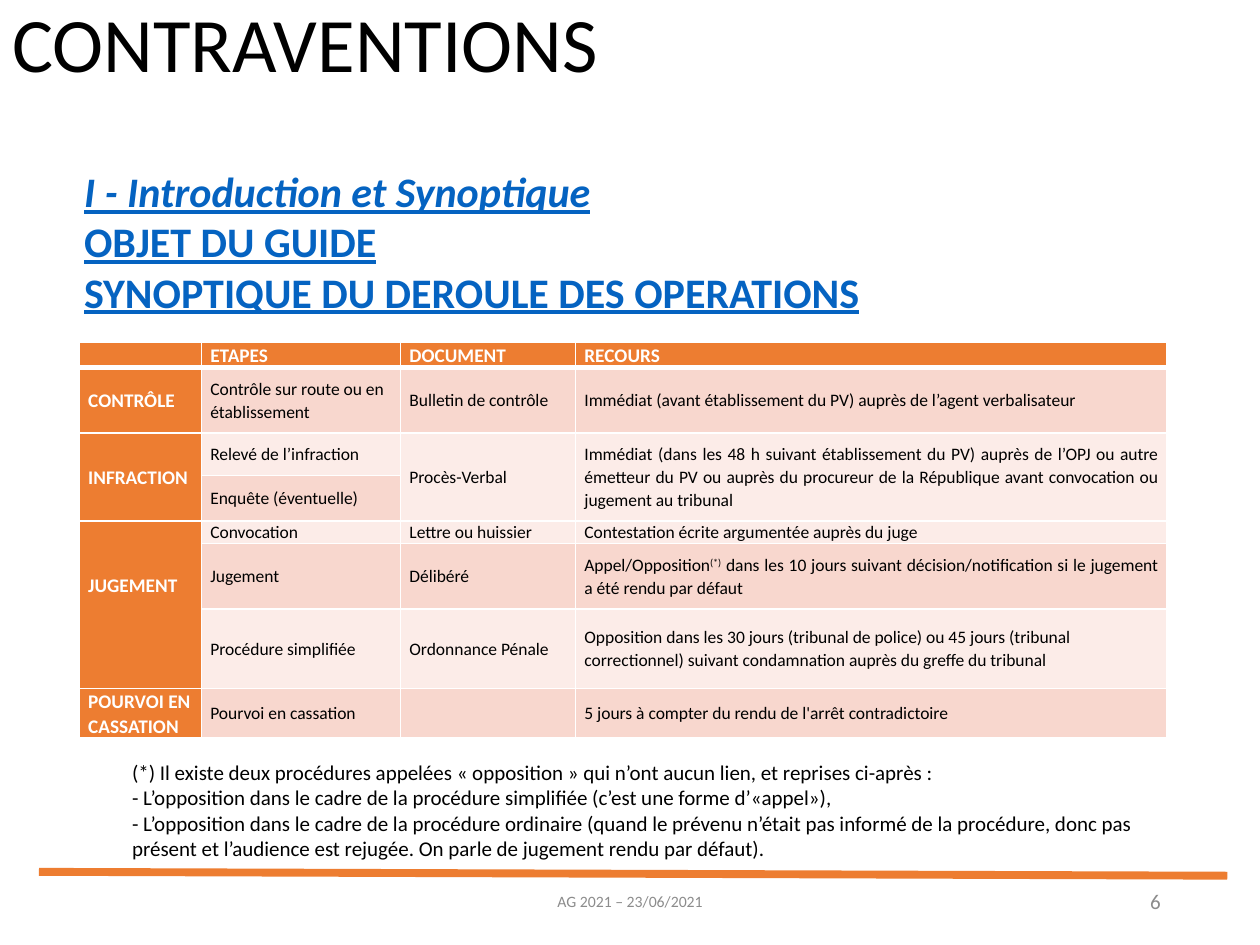
from lxml.etree import SubElement
from pptx import Presentation
from pptx.dml.color import RGBColor
from pptx.enum.shapes import MSO_CONNECTOR
from pptx.enum.text import MSO_ANCHOR, PP_ALIGN
from pptx.oxml.ns import qn
from pptx.util import Pt

ORANGE = RGBColor(0xED, 0x7D, 0x31)
BAND_DARK = RGBColor(0xF8, 0xD7, 0xCE)
BAND_LIGHT = RGBColor(0xFC, 0xEC, 0xE8)
BLUE = RGBColor(0x05, 0x63, 0xC1)
GREY = RGBColor(0x8C, 0x8C, 0x8C)
BLACK = RGBColor(0, 0, 0)
WHITE = RGBColor(0xFF, 0xFF, 0xFF)
FONT = "Calibri"

COLUMN_WIDTHS = [69.8, 113.8, 100, 337.7]
ROW_HEIGHTS = [13, 37.4, 24.5, 25.9, 12.2, 37.4, 45.4, 27.4]
ROWS = [
    ["", "ETAPES", "DOCUMENT", "RECOURS"],
    ["CONTRÔLE", "Contrôle sur route ou en établissement", "Bulletin de contrôle",
     "Immédiat (avant établissement du PV) auprès de l’agent verbalisateur"],
    ["INFRACTION", "Relevé de l’infraction", "Procès-Verbal",
     "Immédiat (dans les 48 h suivant établissement du PV) auprès de l’OPJ ou autre émetteur "
     "du PV ou auprès du procureur de la République avant convocation ou jugement au tribunal"],
    ["", "Enquête (éventuelle)", "", ""],
    ["JUGEMENT", "Convocation", "Lettre ou huissier",
     "Contestation écrite argumentée auprès du juge"],
    ["", "Jugement", "Délibéré",
     "Appel/Opposition(*) dans les 10 jours suivant décision/notification si le jugement "
     "a été rendu par défaut"],
    ["", "Procédure simplifiée", "Ordonnance Pénale",
     "Opposition dans les 30 jours (tribunal de police) ou 45 jours (tribunal correctionnel) "
     "suivant condamnation auprès du greffe du tribunal"],
    ["POURVOI EN CASSATION", "Pourvoi en cassation", "",
     "5 jours à compter du rendu de l'arrêt contradictoire"],
]
MERGES = [(2, 0, 3, 0), (2, 2, 3, 2), (2, 3, 3, 3), (4, 0, 6, 0)]
JUSTIFIED_ROWS = {1, 2, 5, 7}
FOOTNOTE_MARK = "(*)"


def style_font(font, size, color, bold=False):
    font.name = FONT
    font.size = Pt(size)
    font.color.rgb = color
    font.bold = bold


def add_text(slide, box, lines, size, color, anchor=MSO_ANCHOR.TOP,
             alignment=PP_ALIGN.LEFT, bold=False):
    """Add a wrapped text box with one paragraph per line; return its paragraphs."""
    frame = slide.shapes.add_textbox(*map(Pt, box)).text_frame
    frame.word_wrap = True
    frame.vertical_anchor = anchor
    frame.text = "\n".join(lines)
    for paragraph in frame.paragraphs:
        paragraph.alignment = alignment
        style_font(paragraph.font, size, color, bold)
    return frame.paragraphs


def add_title(slide, box):
    paragraph, = add_text(slide, box, ["CONTRAVENTIONS"], 44, BLACK, MSO_ANCHOR.MIDDLE)
    paragraph.line_spacing = 0.9


def add_headings(slide, box):
    lines = ["I - Introduction et Synoptique", "OBJET DU GUIDE",
             "SYNOPTIQUE DU DEROULE DES OPERATIONS"]
    paragraphs = add_text(slide, box, lines, 24, BLUE, bold=True)
    for paragraph in paragraphs:
        paragraph.font.underline = True
    paragraphs[0].font.italic = True


def set_borders(cell, bottom_width):
    properties = cell._tc.get_or_add_tcPr()
    for index, side in enumerate("LRTB"):
        width = bottom_width if side == "B" else 1
        line = SubElement(properties, qn(f"a:ln{side}"), w=str(Pt(width)))
        fill = SubElement(line, qn("a:solidFill"))
        SubElement(fill, qn("a:srgbClr"), val=str(WHITE))
        properties.insert(index, line)


def write_cell(cell, text, size, color, bold, alignment):
    paragraph = cell.text_frame.paragraphs[0]
    paragraph.line_spacing = 1.07
    paragraph.space_after = Pt(8)
    paragraph.alignment = alignment
    style_font(paragraph.font, size, color, bold)
    if not text:
        SubElement(paragraph._p, qn("a:endParaRPr"), sz=str(size * 100))
        return
    before, mark, after = text.partition(FOOTNOTE_MARK)
    for part in filter(None, (before, mark, after)):
        run = paragraph.add_run()
        run.text = part
        if part == FOOTNOTE_MARK:
            run.font._element.set("baseline", "30000")


def add_synoptic_table(slide, box):
    table = slide.shapes.add_table(len(ROWS), len(COLUMN_WIDTHS), *map(Pt, box)).table
    for column, width in zip(table.columns, COLUMN_WIDTHS):
        column.width = Pt(width)
    last_row = len(ROWS) - 1
    for r, (row, height) in enumerate(zip(ROWS, ROW_HEIGHTS)):
        table.rows[r].height = Pt(height)
        for c, text in enumerate(row):
            cell = table.cell(r, c)
            heading = r == 0 or c == 0
            cell.margin_left = cell.margin_right = Pt(5)
            cell.margin_top = cell.margin_bottom = 0
            top = r == 0 or (r == last_row and c == 0)
            cell.vertical_anchor = MSO_ANCHOR.TOP if top else MSO_ANCHOR.MIDDLE
            cell.fill.solid()
            band = BAND_DARK if r % 2 else BAND_LIGHT
            cell.fill.fore_color.rgb = ORANGE if heading else band
            set_borders(cell, 3 if r == 0 else 1)
            justified = c == 3 and r in JUSTIFIED_ROWS
            write_cell(cell, text, 11 if heading else 10, WHITE if heading else BLACK,
                       heading, PP_ALIGN.JUSTIFY if justified else PP_ALIGN.LEFT)
    for top, left, bottom, right in MERGES:
        table.cell(top, left).merge(table.cell(bottom, right))
    table.cell(4, 0).margin_bottom = Pt(22)  # lifts JUGEMENT above the middle


def add_notes_on_opposition(slide, box):
    add_text(slide, box, [
        "(*) Il existe deux procédures appelées « opposition » qui n’ont aucun lien, "
        "et reprises ci-après :",
        "- L’opposition dans le cadre de la procédure simplifiée "
        "(c’est une forme d’«appel»),",
        "- L’opposition dans le cadre de la procédure ordinaire (quand le prévenu n’était pas "
        "informé de la procédure, donc pas présent et l’audience est rejugée. "
        "On parle de jugement rendu par défaut).",
    ], 12, BLACK)


def add_footer(slide, box):
    left, top, width, height = box
    rule = slide.shapes.add_connector(
        MSO_CONNECTOR.STRAIGHT, Pt(left), Pt(top), Pt(left + width), Pt(top + 2.2))
    rule.line.color.rgb = ORANGE
    rule.line.width = Pt(4.5)
    SubElement(rule._element.spPr, qn("a:effectLst"))
    text_top, text_height = top + 2.2, height - 2.2
    add_text(slide, (left + 216, text_top, 243.4, text_height), ["AG 2021 – 23/06/2021"],
             9, GREY, MSO_ANCHOR.MIDDLE, PP_ALIGN.CENTER)
    add_text(slide, (left + 486, text_top, 162, text_height), ["6"],
             12, GREY, MSO_ANCHOR.MIDDLE, PP_ALIGN.RIGHT)


def main():
    presentation = Presentation()
    presentation.slide_width = Pt(720)
    presentation.slide_height = Pt(540)
    slide = presentation.slides.add_slide(presentation.slide_layouts[6])
    add_footer(slide, (22.3, 498.2, 679, 31))
    add_title(slide, (0, 1.4, 494, 51.8))
    add_headings(slide, (41, 91, 548, 124))
    add_synoptic_table(slide, (45.4, 195.8, sum(COLUMN_WIDTHS), sum(ROW_HEIGHTS)))
    add_notes_on_opposition(slide, (68.4, 430.6, 620.6, 65.5))
    presentation.save("out.pptx")


if __name__ == "__main__":
    main()
